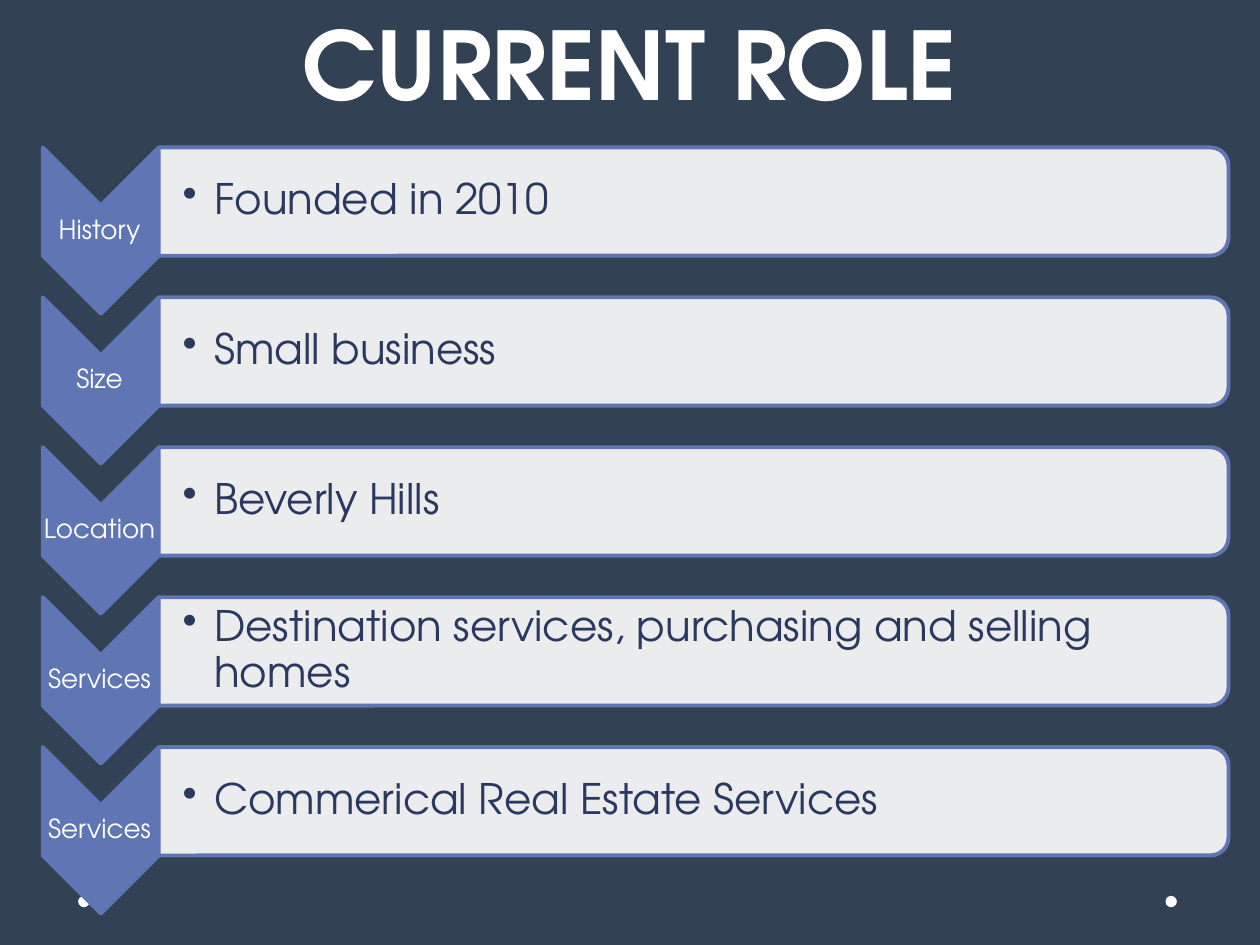
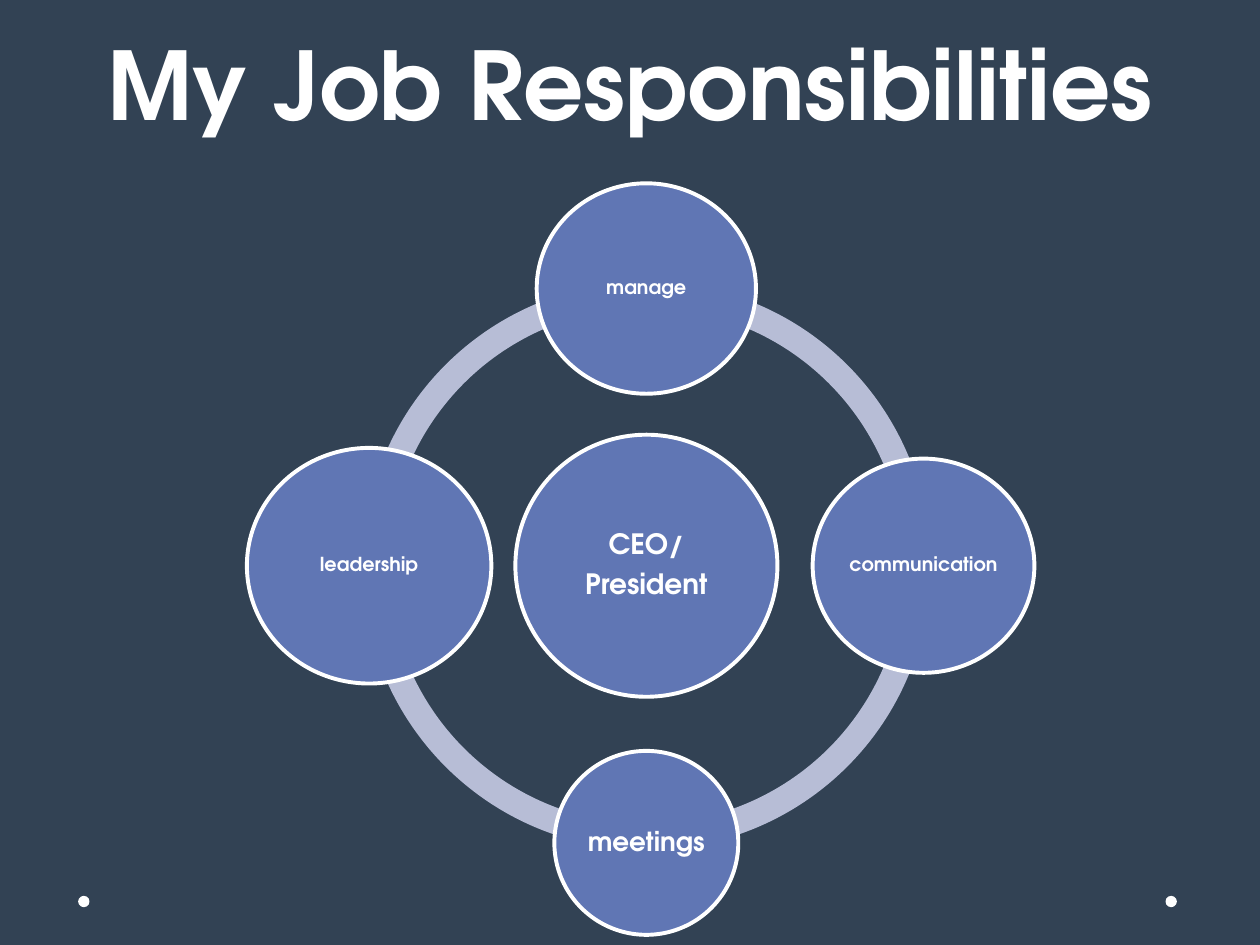
"""Build two slides: a chevron list of the current role and a ring of responsibilities."""
from dataclasses import dataclass
from typing import NamedTuple

from lxml import etree
from pptx import Presentation
from pptx.dml.color import RGBColor
from pptx.enum import shapes, text
from pptx.oxml import ns
from pptx.util import Inches, Pt


@dataclass(frozen=True)
class Theme:
    font: str = "TeX Gyre Adventor"
    night: RGBColor = RGBColor(0x32, 0x42, 0x54)
    white: RGBColor = RGBColor(0xFF, 0xFF, 0xFF)
    blue: RGBColor = RGBColor(0x60, 0x76, 0xB4)
    pale_blue: RGBColor = RGBColor(0xB7, 0xBD, 0xD6)
    navy: RGBColor = RGBColor(0x2C, 0x39, 0x5E)
    title_size: int = 54
    title_leading: int = 58
    fact_size: int = 24
    hub_size: int = 16
    label_size: int = 15
    small_size: int = 11
    outline: float = 2.25


class Box(NamedTuple):
    left: float
    top: float
    width: float
    height: float

    def lengths(self):
        return [Inches(side) for side in self]

    def before_quarter_turn(self):
        shift = (self.width - self.height) / 2
        return Box(self.left + shift, self.top - shift, self.height, self.width)


class Fact(NamedTuple):
    label: str
    detail: str


class Duty(NamedTuple):
    lines: tuple[str, ...]
    center_x: float
    center_y: float
    width: float
    height: float
    size: int


THEME = Theme()
SHAPE = shapes.MSO_SHAPE
CENTER, LEFT = text.PP_ALIGN.CENTER, text.PP_ALIGN.LEFT

FACTS = (
    Fact("History", "Founded in 2010"),
    Fact("Size", "Small business"),
    Fact("Location", "Beverly Hills"),
    Fact("Services", "Destination services, purchasing and selling homes"),
    Fact("Services", "Commerical Real Estate Services"),
)
FIRST_ROW, ROW_PITCH = 1.17, 1.19

RING_X, RING_Y, RING_SIZE, ORBIT = 5.13, 4.49, 4.51, 2.2
DUTIES = (
    Duty(("CEO/", "President"), RING_X, RING_Y, 2.08, 2.08, THEME.hub_size),
    Duty(("manage",), RING_X, RING_Y - ORBIT, 1.74, 1.67, THEME.small_size),
    Duty(("communication",), RING_X + ORBIT, RING_Y, 1.76, 1.7, THEME.small_size),
    Duty(("meetings",), RING_X, RING_Y + ORBIT, 1.46, 1.46, THEME.label_size),
    Duty(("leadership",), RING_X - ORBIT, RING_Y, 1.94, 1.87, THEME.small_size),
)


def add_figure(slide, kind, box: Box, fill: RGBColor, line: RGBColor | None = None, rotation: int = 0):
    figure = slide.shapes.add_shape(kind, *box.lengths())
    figure.shadow.inherit = False
    figure.rotation = rotation
    figure.fill.solid()
    figure.fill.fore_color.rgb = fill
    if line is None:
        figure.line.fill.background()
    else:
        figure.line.color.rgb = line
        figure.line.width = Pt(THEME.outline)
    return figure


def write(frame, lines, size: int, color: RGBColor = THEME.white, bold: bool = False,
          align=CENTER, leading=0.9, after: float = 0.35, inset: float = 0.02):
    frame.word_wrap = True
    frame.vertical_anchor = text.MSO_ANCHOR.MIDDLE
    frame.margin_left = frame.margin_right = Inches(inset)
    frame.margin_top = frame.margin_bottom = Inches(inset)
    for index, line in enumerate(lines):
        paragraph = frame.add_paragraph() if index else frame.paragraphs[0]
        paragraph.alignment = align
        paragraph.line_spacing = leading
        paragraph.space_after = Pt(size * after)
        run = paragraph.add_run()
        run.text = line
        run.font.name = THEME.font
        run.font.size = Pt(size)
        run.font.bold = bold
        run.font.color.rgb = color


def add_text(slide, box: Box, lines, size: int, **style):
    frame = slide.shapes.add_textbox(*box.lengths()).text_frame
    write(frame, lines, size, **style)
    return frame


def add_bullet(paragraph, indent: float):
    properties = paragraph._p.get_or_add_pPr()
    properties.set("marL", str(Inches(indent)))
    properties.set("indent", str(-Inches(indent)))
    etree.SubElement(properties, ns.qn("a:buChar")).set("char", "•")


def set_opacity(figure, percent: int):
    color = figure.fill._xPr.find(".//" + ns.qn("a:srgbClr"))
    etree.SubElement(color, ns.qn("a:alpha")).set("val", str(percent * 1000))


def start_slide(deck, title: str, title_box: Box):
    slide = deck.slides.add_slide(deck.slide_layouts[6])
    slide.background.fill.solid()
    slide.background.fill.fore_color.rgb = THEME.night
    for left in (9.25, 0.62):
        add_figure(slide, SHAPE.OVAL, Box(left, 7.11, 0.09, 0.09), THEME.white)
    frame = add_text(slide, title_box, (title,), THEME.title_size, bold=True,
                     leading=Pt(THEME.title_leading), after=0, inset=0.05)
    frame.vertical_anchor = text.MSO_ANCHOR.BOTTOM
    return slide


def add_fact(slide, fact: Fact, top: float):
    chevron = Box(0.34, top, 0.92, 1.32).before_quarter_turn()
    add_figure(slide, SHAPE.CHEVRON, chevron, THEME.blue, THEME.blue, 90)
    add_text(slide, Box(0.33, top + 0.46, 0.92, 0.4), (fact.label,), THEME.label_size, inset=0.01)
    panel = Box(1.26, top, 8.49, 0.86).before_quarter_turn()
    bar = add_figure(slide, SHAPE.ROUND_2_SAME_RECTANGLE, panel, THEME.white, THEME.blue, 90)
    set_opacity(bar, 90)
    detail = add_text(slide, Box(1.26, top + 0.04, 8.45, 0.77), (fact.detail,), THEME.fact_size,
                      color=THEME.navy, align=LEFT, after=0.15)
    detail.margin_left = Inches(0.19)
    add_bullet(detail.paragraphs[0], 0.25)


def add_ring(slide):
    corner = RING_SIZE / 2
    box = Box(RING_X - corner, RING_Y - corner, RING_SIZE, RING_SIZE)
    for start in (180, 90, 0, 270):
        arc = add_figure(slide, SHAPE.BLOCK_ARC, box, THEME.pale_blue)
        arc.adjustments[0] = start * 0.6
        arc.adjustments[1] = (start + 90) % 360 * 0.6
        arc.adjustments[2] = 0.046


def add_duty(slide, duty: Duty):
    box = Box(duty.center_x - duty.width / 2, duty.center_y - duty.height / 2, duty.width, duty.height)
    circle = add_figure(slide, SHAPE.OVAL, box, THEME.blue, THEME.white)
    write(circle.text_frame, duty.lines, duty.size, bold=True)


def main():
    deck = Presentation()
    deck.slide_width, deck.slide_height = Inches(10), Inches(7.5)

    role = start_slide(deck, "CURRENT ROLE", Box(0.5, -0.25, 9, 1.25))
    for row, fact in enumerate(FACTS):
        add_fact(role, fact, FIRST_ROW + row * ROW_PITCH)

    responsibilities = start_slide(deck, "My Job Responsibilities", Box(0, -0.17, 10, 1.33))
    add_ring(responsibilities)
    for duty in DUTIES:
        add_duty(responsibilities, duty)

    deck.save("out.pptx")


if __name__ == "__main__":
    main()
